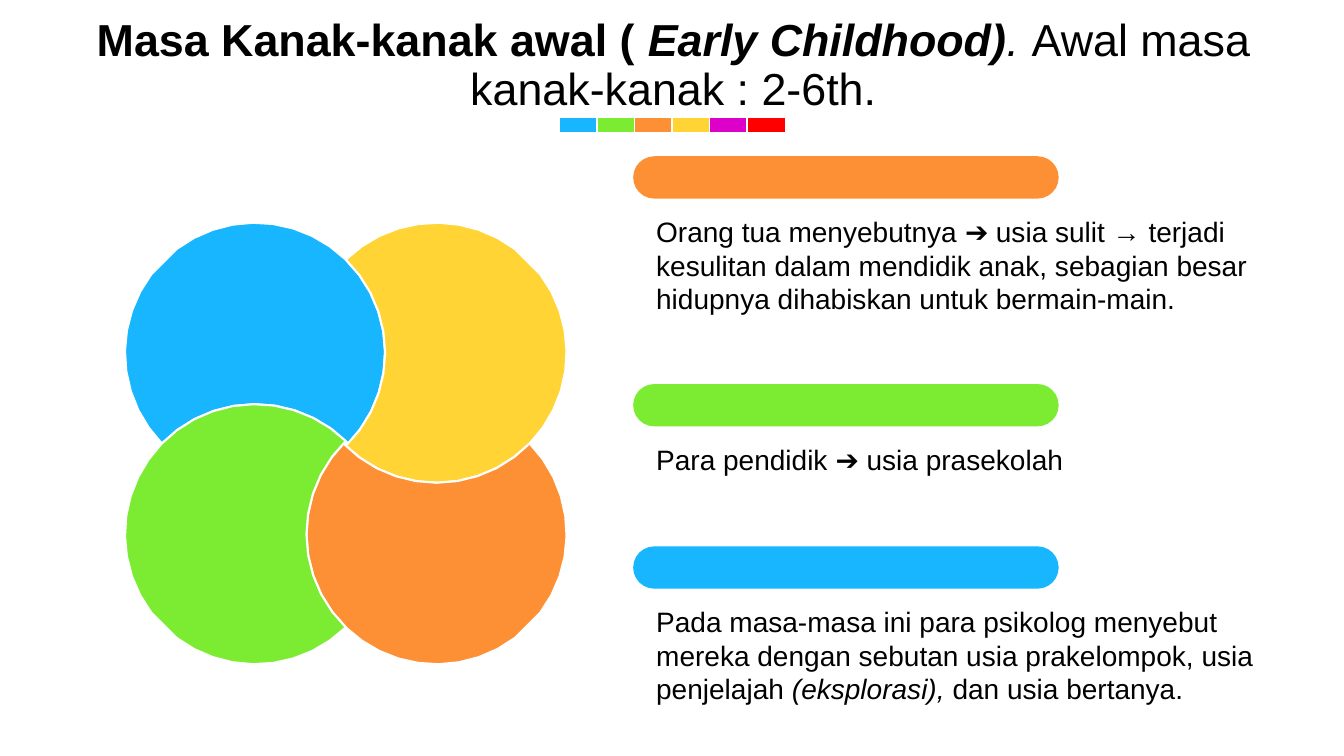
"""Build the early childhood slide with four interlocking petals and three notes."""
import math

import pptx
import pptx.dml.color
import pptx.enum.shapes
import pptx.enum.text
import pptx.util

Inches = pptx.util.Inches
Pt = pptx.util.Pt
RGBColor = pptx.dml.color.RGBColor
Shapes = pptx.enum.shapes.MSO_SHAPE

BLUE = RGBColor(0x17, 0xB6, 0xFF)
GREEN = RGBColor(0x7C, 0xEC, 0x32)
ORANGE = RGBColor(0xFD, 0x90, 0x34)
YELLOW = RGBColor(0xFF, 0xD4, 0x34)
MAGENTA = RGBColor(0xDC, 0x00, 0xC8)
RED = RGBColor(0xFF, 0x00, 0x00)
WHITE = RGBColor(0xFF, 0xFF, 0xFF)
BLACK = RGBColor(0x00, 0x00, 0x00)


def paint(shape, color, line_width=None):
    shape.shadow.inherit = False
    shape.fill.solid()
    shape.fill.fore_color.rgb = color
    if line_width is None:
        shape.line.fill.background()
    else:
        shape.line.color.rgb = WHITE
        shape.line.width = Pt(line_width)


def add_text(left, top, width, height, size, runs):
    frame = slide.shapes.add_textbox(
        Inches(left), Inches(top), Inches(width), Inches(height)).text_frame
    frame.word_wrap = True
    paragraph = frame.paragraphs[0]
    paragraph.font.size = Pt(size)
    paragraph.font.name = "Arial"
    paragraph.font.color.rgb = BLACK
    for text, bold, italic in runs:
        run = paragraph.add_run()
        run.text = text
        run.font.bold = bold
        run.font.italic = italic
    return frame


presentation = pptx.Presentation()
presentation.slide_width = Inches(13.33)
presentation.slide_height = Inches(7.5)
slide = presentation.slides.add_slide(presentation.slide_layouts[6])

for index, color in enumerate([BLUE, GREEN, ORANGE, YELLOW, MAGENTA, RED]):
    swatch = slide.shapes.add_shape(
        Shapes.RECTANGLE, Inches(5.55 + index * 1.86 / 5), Inches(1.16),
        Inches(0.38), Inches(0.16))
    paint(swatch, color, 1)

title = add_text(0.35, 0.24, 12.66, 0.79, 32, [
    ("Masa Kanak-kanak awal ( ", True, False),
    ("Early Childhood)", True, True),
    (". ", False, True),
    ("Awal masa kanak-kanak : 2-6th.", False, False),
])
title.margin_top = Inches(0.1)
title.vertical_anchor = pptx.enum.text.MSO_ANCHOR.MIDDLE
title_paragraph = title.paragraphs[0]
title_paragraph.alignment = pptx.enum.text.PP_ALIGN.CENTER
title_paragraph.line_spacing = 0.9
title_paragraph.space_before = Pt(10)

notes = [
    (1.55, 1.11, ORANGE, [
        ("Orang tua menyebutnya ➔ usia sulit → terjadi kesulitan dalam mendidik anak, "
         "sebagian besar hidupnya dihabiskan untuk bermain-main.", False, False)]),
    (3.81, 0.44, GREEN, [("Para pendidik ➔ usia prasekolah", False, False)]),
    (5.42, 1.45, BLUE, [
        ("Pada masa-masa ini para psikolog menyebut mereka dengan sebutan "
         "usia prakelompok, usia penjelajah ", False, False),
        ("(eksplorasi), ", False, True),
        ("dan usia bertanya.", False, False)]),
]
for top, text_height, color, runs in notes:
    bar = slide.shapes.add_shape(
        Shapes.ROUNDED_RECTANGLE, Inches(6.28), Inches(top), Inches(4.22), Inches(0.42))
    bar.adjustments[0] = 0.5
    paint(bar, color)
    note = add_text(6.41, top + 0.53, 6.24, text_height, 20, runs)
    note.auto_size = pptx.enum.text.MSO_AUTO_SIZE.SHAPE_TO_FIT_TEXT

RADIUS = 1.29
SPACING = 1.8
MIDDLE_X, MIDDLE_Y = 3.43, 4.4
half_bite = math.degrees(math.acos(SPACING / 2 / RADIUS))

petals = [(BLUE, -1, -1, 90), (YELLOW, 1, -1, 180), (ORANGE, 1, 1, 270), (GREEN, -1, 1, 0)]
for color, column, row, bite in petals:
    center_x = MIDDLE_X + column * SPACING / 2
    center_y = MIDDLE_Y + row * SPACING / 2
    neighbour_x = center_x + SPACING * math.cos(math.radians(bite))
    neighbour_y = center_y + SPACING * math.sin(math.radians(bite))
    arcs = [
        (center_x, center_y, half_bite, 127, 9),
        (center_x, center_y, 143, 360 - half_bite, 19),
        (neighbour_x, neighbour_y, 180 + half_bite, 180 - half_bite, 10),
    ]
    points = []
    for x, y, start, end, steps in arcs:
        for step in range(steps + 1):
            angle = math.radians(bite + start + (end - start) * step / steps)
            points.append((Inches(x + RADIUS * math.cos(angle)),
                           Inches(y + RADIUS * math.sin(angle))))
    builder = slide.shapes.build_freeform(*points[0])
    builder.add_line_segments(points[1:], close=True)
    paint(builder.convert_to_shape(), color, 1.5)

presentation.save("out.pptx")
